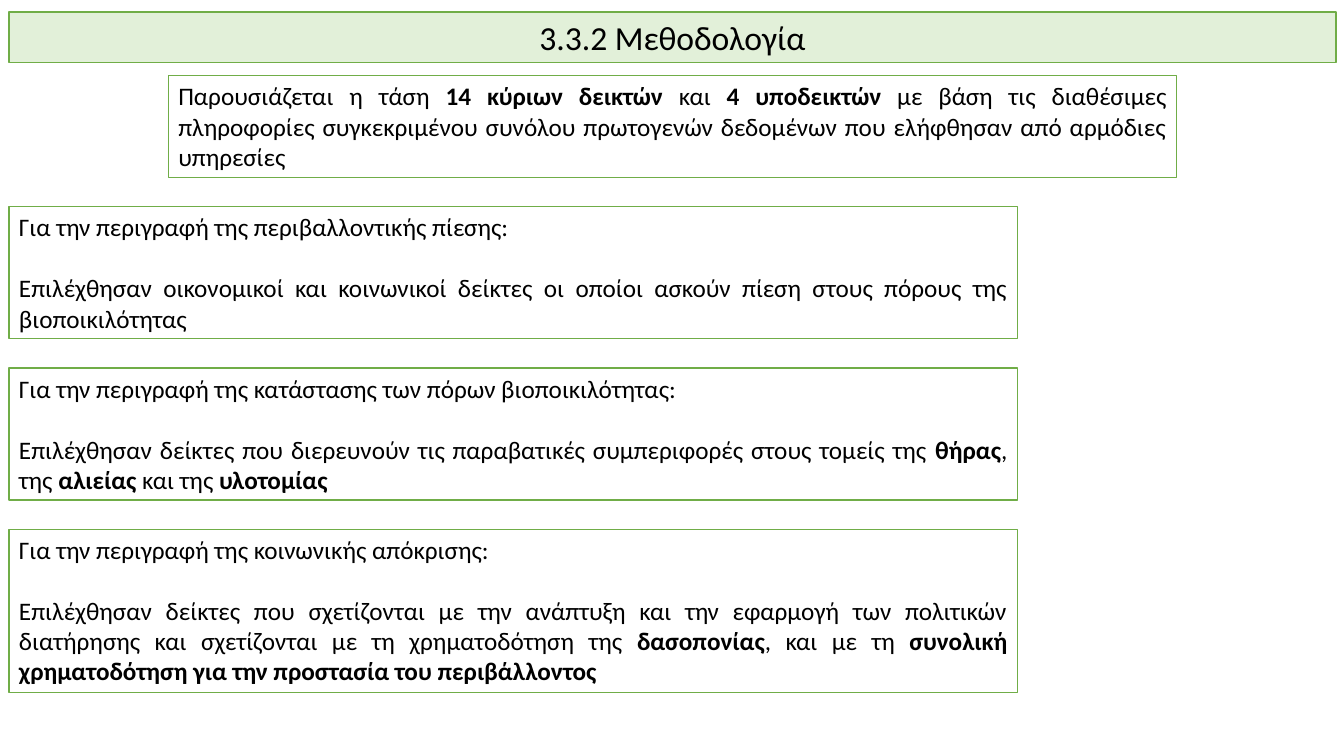
from pptx import Presentation
from pptx.dml.color import RGBColor
from pptx.enum.shapes import MSO_SHAPE
from pptx.enum.text import MSO_ANCHOR, MSO_AUTO_SIZE, PP_ALIGN
from pptx.util import Emu, Pt

RECTANGLE = MSO_SHAPE.RECTANGLE
TOP = MSO_ANCHOR.TOP
FIT_SHAPE = MSO_AUTO_SIZE.SHAPE_TO_FIT_TEXT
CENTER, JUSTIFY = PP_ALIGN.CENTER, PP_ALIGN.JUSTIFY

EMU_PER_PX = 9144  # 100 px to the inch
FONT = "Calibri"
COLORS = {"text": "000000", "border": "70AD47", "title": "E2F0D9", "box": "FFFFFF"}

LEFT = 9
BOX_WIDTH = 1000
FIRST_TOPIC_TOP = 205
TOPIC_GAP = 29

TITLE = "3.3.2 Μεθοδολογία"
INTRO = (
    "Παρουσιάζεται η τάση **14 κύριων δεικτών **και **4 υποδεικτών **με βάση τις "
    "διαθέσιμες πληροφορίες συγκεκριμένου συνόλου πρωτογενών δεδομένων που "
    "ελήφθησαν από αρμόδιες υπηρεσίες"
)
# Height, heading, indicators chosen
TOPICS = [
    (131, "Για την περιγραφή της περιβαλλοντικής πίεσης:",
     "Επιλέχθησαν οικονομικοί και κοινωνικοί δείκτες οι οποίοι ασκούν πίεση στους "
     "πόρους της βιοποικιλότητας"),
    (131, "Για την περιγραφή της κατάστασης των πόρων βιοποικιλότητας:",
     "Επιλέχθησαν δείκτες που διερευνούν τις παραβατικές συμπεριφορές στους τομείς "
     "της **θήρας**, της **αλιείας** και της **υλοτομίας**"),
    (162, "Για την περιγραφή της κοινωνικής απόκρισης:",
     "Επιλέχθησαν δείκτες που σχετίζονται με την ανάπτυξη και την εφαρμογή των "
     "πολιτικών διατήρησης και σχετίζονται με τη χρηματοδότηση της **δασοπονίας**, "
     "και με τη **συνολική χρηματοδότηση για την προστασία του περιβάλλοντος**"),
]


def px(length):
    return Emu(length * EMU_PER_PX)


def color(name):
    return RGBColor.from_string(COLORS[name])


def write_text(frame, paragraphs, size=18, align=JUSTIFY, gap=22):
    """Write paragraphs gap points apart; text between ** marks is bold."""
    for index, text in enumerate(paragraphs):
        paragraph = frame.add_paragraph() if index else frame.paragraphs[0]
        paragraph.alignment = align
        if index:
            paragraph.space_before = Pt(gap)
        for part, words in enumerate(text.split("**")):
            if not words:
                continue
            run = paragraph.add_run()
            run.text = words
            run.font.name = FONT
            run.font.size = Pt(size)
            run.font.bold = part % 2 == 1
            run.font.color.rgb = color("text")


def add_box(slide, left, top, width, height, paragraphs, fill="box", **text_format):
    box = slide.shapes.add_shape(RECTANGLE, px(left), px(top), px(width), px(height))
    box.shadow.inherit = False
    box.fill.solid()
    box.fill.fore_color.rgb = color(fill)
    box.line.color.rgb = color("border")
    box.line.width = Pt(1)
    frame = box.text_frame
    frame.word_wrap = True
    frame.auto_size = FIT_SHAPE
    frame.vertical_anchor = TOP
    write_text(frame, paragraphs, **text_format)


def add_topics(slide):
    top = FIRST_TOPIC_TOP
    for height, heading, indicators in TOPICS:
        add_box(slide, LEFT, top, BOX_WIDTH, height, [heading, indicators])
        top += height + TOPIC_GAP


def main():
    presentation = Presentation()
    presentation.slide_width = px(1333)
    presentation.slide_height = px(750)
    slide = presentation.slides.add_slide(presentation.slide_layouts[6])
    add_box(slide, LEFT, 12, 1316, 50, [TITLE], fill="title", size=24, align=CENTER)
    add_box(slide, 167, 75, BOX_WIDTH, 101, [INTRO])
    add_topics(slide)
    presentation.save("out.pptx")


if __name__ == "__main__":
    main()
